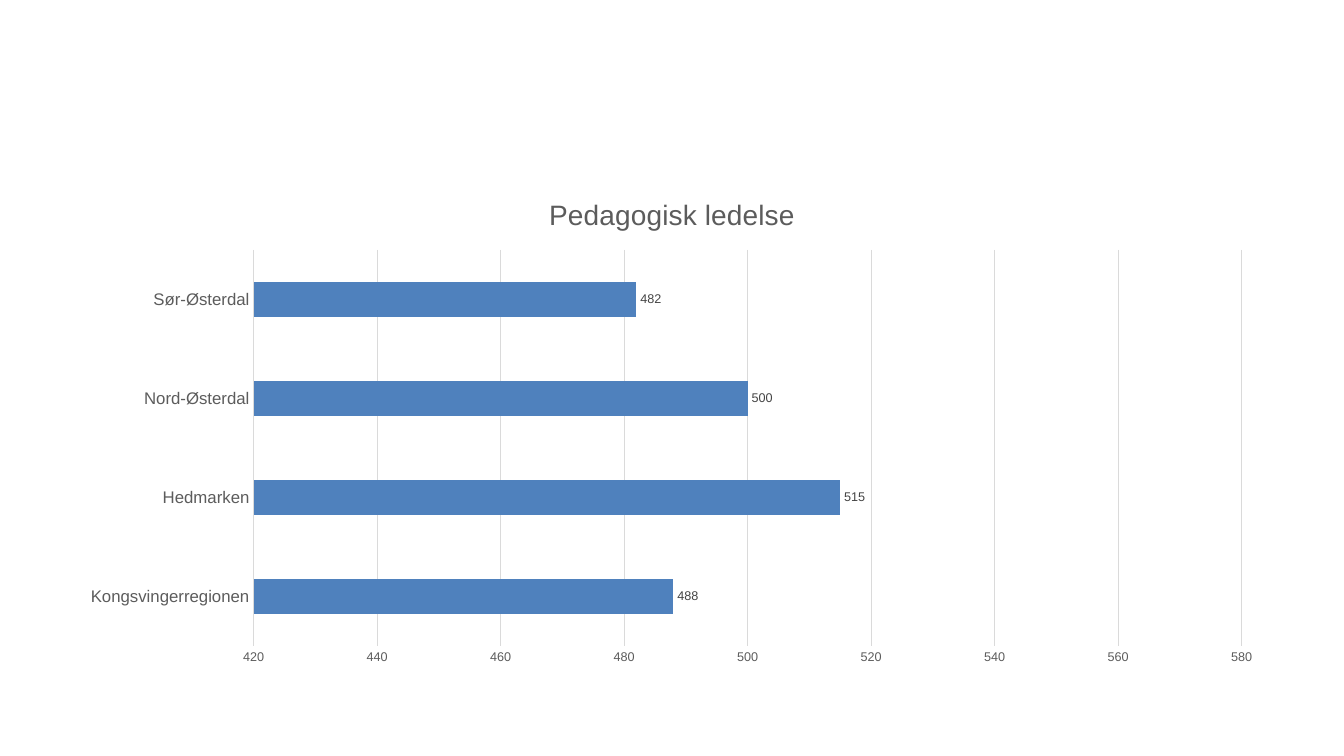
from lxml.etree import SubElement
from pptx import Presentation
from pptx.chart.data import CategoryChartData
from pptx.dml.color import RGBColor
from pptx.enum.chart import XL_CHART_TYPE, XL_LABEL_POSITION, XL_TICK_LABEL_POSITION, XL_TICK_MARK
from pptx.oxml.ns import qn
from pptx.util import Inches, Pt

BAR_BLUE = RGBColor(0x4F, 0x81, 0xBD)
GRID_GREY = RGBColor(0xDA, 0xDA, 0xDA)
TEXT_GREY = RGBColor(0x5C, 0x5C, 0x5C)
LABEL_GREY = RGBColor(0x44, 0x44, 0x44)
BASE_TEXT = RGBColor(0x05, 0x05, 0x05)

TITLE = "Pedagogisk ledelse"
SCORES = {
    "Kongsvingerregionen": 488,
    "Hedmarken": 515,
    "Nord-Østerdal": 500,
    "Sør-Østerdal": 482,
}
CHART_WIDTH, CHART_HEIGHT = 12, 4.95


def style_font(font, size, color):
    font.name = "Arial"
    font.size = Pt(size)
    font.bold = False
    font.color.rgb = color


def style_line(line):
    line.color.rgb = GRID_GREY
    line.width = Pt(0.75)


def style_axis(axis, text_size):
    axis.major_tick_mark = axis.minor_tick_mark = XL_TICK_MARK.NONE
    axis.tick_label_position = XL_TICK_LABEL_POSITION.NEXT_TO_AXIS
    style_font(axis.tick_labels.font, text_size, TEXT_GREY)


def place_plot(chart, **shares):
    """Fix the inner plot area, given as x, y, w and h shares of the chart."""
    plot_area = chart._chartSpace.chart.plotArea
    layout = plot_area.find(qn("c:layout"))
    if layout is None:
        layout = SubElement(plot_area, qn("c:layout"))
        plot_area.insert(0, layout)
    manual = SubElement(layout, qn("c:manualLayout"))
    settings = {"layoutTarget": "inner", "xMode": "edge", "yMode": "edge", **shares}
    for name, value in settings.items():
        SubElement(manual, qn(f"c:{name}")).set("val", str(value))


def add_title(chart):
    chart.has_title = True
    chart.chart_title.include_in_layout = False
    run = chart.chart_title.text_frame.paragraphs[0].add_run()
    run.text = TITLE
    style_font(run.font, 20, TEXT_GREY)


def style_bars(plot):
    plot.gap_width = 182
    plot.vary_by_categories = False
    series = plot.series[0]
    series.format.fill.solid()
    series.format.fill.fore_color.rgb = BAR_BLUE
    labels = series.data_labels
    labels.show_value = True
    labels.number_format = "0"
    labels.number_format_is_linked = False
    labels.position = XL_LABEL_POSITION.OUTSIDE_END
    style_font(labels.font, 9, LABEL_GREY)


def style_scale(scale):
    style_axis(scale, 9)
    scale.minimum_scale, scale.maximum_scale, scale.major_unit = 420, 580, 20
    scale.tick_labels.number_format = "0"
    scale.tick_labels.number_format_is_linked = False
    scale.format.line.fill.background()
    style_line(scale.major_gridlines.format.line)


def add_score_chart(slide, slide_width):
    data = CategoryChartData(number_format="0")
    data.categories = SCORES.keys()
    data.add_series(TITLE, SCORES.values())
    width = Inches(CHART_WIDTH)
    chart = slide.shapes.add_chart(
        XL_CHART_TYPE.BAR_CLUSTERED,
        (slide_width - width) // 2, Inches(1.75), width, Inches(CHART_HEIGHT), data,
    ).chart
    chart.has_legend = False
    style_font(chart.font, 10, BASE_TEXT)
    add_title(chart)
    style_bars(chart.plots[0])
    style_axis(chart.category_axis, 12)
    style_line(chart.category_axis.format.line)
    style_scale(chart.value_axis)
    place_plot(
        chart,
        x=1.85 / CHART_WIDTH, y=0.73 / CHART_HEIGHT,
        w=9.8 / CHART_WIDTH, h=3.93 / CHART_HEIGHT,
    )


def main():
    presentation = Presentation()
    presentation.slide_width = Inches(13.33)
    presentation.slide_height = Inches(7.5)
    slide = presentation.slides.add_slide(presentation.slide_layouts[6])
    add_score_chart(slide, presentation.slide_width)
    presentation.save("out.pptx")


if __name__ == "__main__":
    main()
